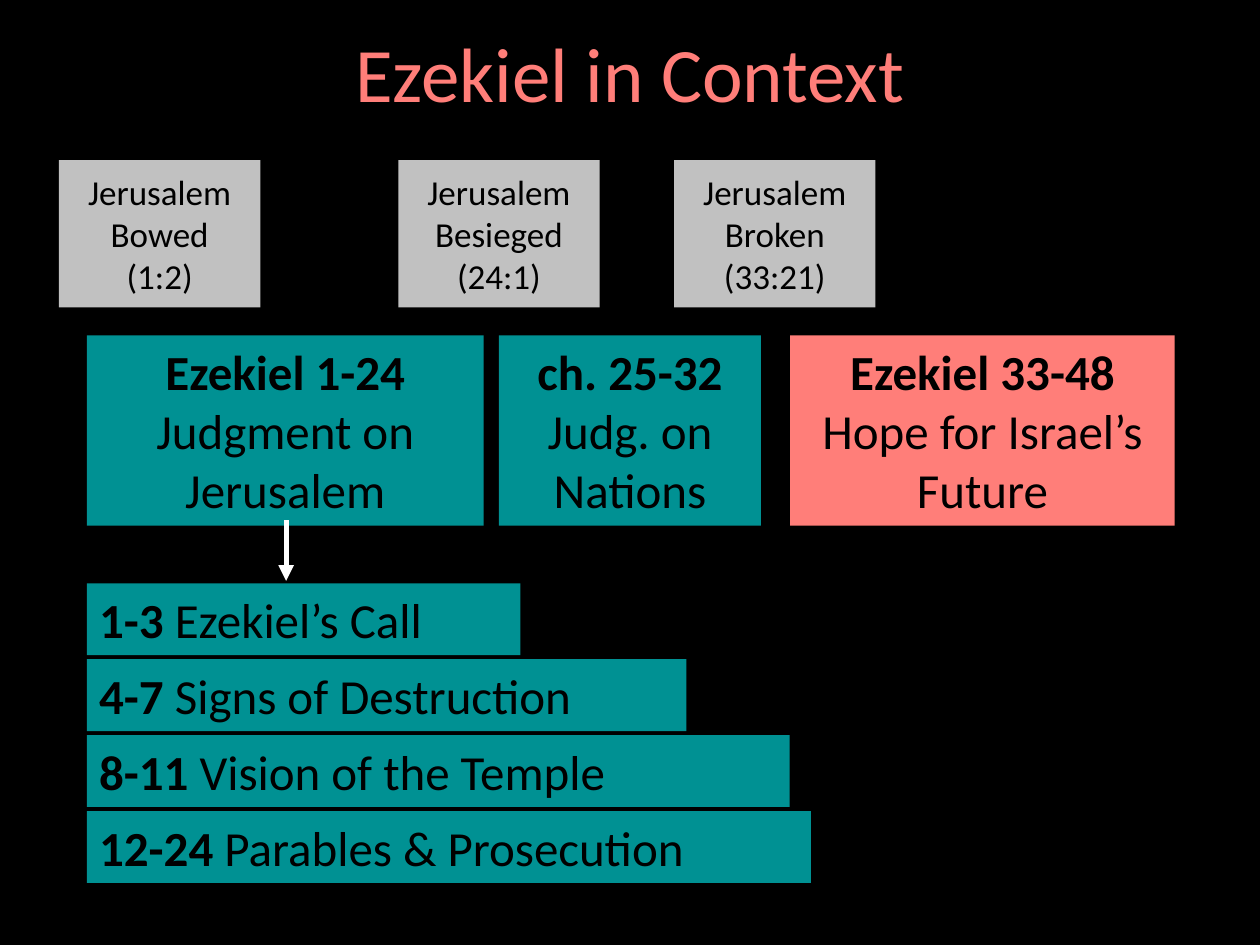
from dataclasses import dataclass

from lxml.etree import SubElement
from pptx import Presentation
from pptx.dml.color import RGBColor
from pptx.enum.shapes import MSO_CONNECTOR, MSO_SHAPE
from pptx.enum.text import MSO_ANCHOR as Anchor, MSO_AUTO_SIZE as AutoSize, PP_ALIGN as Align
from pptx.oxml.ns import qn
from pptx.util import Cm, Pt

FONT = "Calibri"
BLACK, WHITE, GREY, TEAL, CORAL = "000000", "FFFFFF", "C1C1C1", "009193", "FF7E79"
MARGIN = 1.75


@dataclass
class Event:
    left: float
    name: str
    verse: str


@dataclass
class Division:
    left: float
    width: float
    chapters: str
    theme: str
    color: str = TEAL


@dataclass
class Section:
    width: float
    chapters: str
    theme: str


EVENTS = [
    Event(1.19, "Jerusalem Bowed", "(1:2)"),
    Event(8.03, "Jerusalem Besieged", "(24:1)"),
    Event(13.59, "Jerusalem Broken", "(33:21)"),
]
DIVISIONS = [
    Division(MARGIN, 8, "Ezekiel 1-24", "Judgment on Jerusalem"),
    Division(10.06, 5.28, "ch. 25-32", "Judg. on Nations"),
    Division(15.93, 7.75, "Ezekiel 33-48", "Hope for Israel’s Future", CORAL),
]
SECTIONS = [
    Section(8.74, "1-3 ", "Ezekiel’s Call"),
    Section(12.09, "4-7 ", "Signs of Destruction"),
    Section(14.17, "8-11 ", "Vision of the Temple"),
    Section(14.6, "12-24 ", "Parables & Prosecution"),
]


def rgb(color: str) -> RGBColor:
    return RGBColor.from_string(color)


def style(run, size: float, color: str = BLACK, bold: bool = False) -> None:
    run.font.name = FONT
    run.font.size = Pt(size)
    run.font.bold = bold
    run.font.color.rgb = rgb(color)


def add_box(slide, left: float, top: float, width: float, height: float, color: str):
    box = slide.shapes.add_shape(
        MSO_SHAPE.RECTANGLE, Cm(left), Cm(top), Cm(width), Cm(height)
    )
    box.shadow.inherit = False
    box.fill.solid()
    box.fill.fore_color.rgb = rgb(color)
    box.line.fill.background()
    box.text_frame.word_wrap = True
    return box.text_frame


def write_lines(frame, lines: list[str], size: float, bold_first: bool = False) -> None:
    frame.text = "\n".join(lines)
    for index, paragraph in enumerate(frame.paragraphs):
        paragraph.alignment = Align.CENTER
        style(paragraph.runs[0], size, bold=bold_first and index == 0)


def add_title(slide, text: str) -> None:
    frame = slide.shapes.add_textbox(Cm(MARGIN), Cm(0.41), Cm(21.9), Cm(2.29)).text_frame
    frame.word_wrap = True
    frame.vertical_anchor = Anchor.MIDDLE
    frame.text = text
    heading = frame.paragraphs[0]
    heading.alignment = Align.CENTER
    heading.line_spacing = 0.9
    style(heading.runs[0], 44, CORAL)


def add_event(slide, event: Event) -> None:
    frame = add_box(slide, event.left, 3.23, 4.06, 2.97, GREY)
    frame.vertical_anchor = Anchor.MIDDLE
    write_lines(frame, [event.name, event.verse], 20)


def add_division(slide, division: Division) -> None:
    frame = add_box(slide, division.left, 6.76, division.width, 3.84, division.color)
    frame.vertical_anchor = Anchor.TOP
    frame.auto_size = AutoSize.SHAPE_TO_FIT_TEXT
    write_lines(frame, [division.chapters, division.theme], 28, bold_first=True)


def add_section(slide, row: int, section: Section) -> None:
    frame = add_box(slide, MARGIN, 11.76 + row * 1.53, section.width, 1.45, TEAL)
    frame.vertical_anchor = Anchor.TOP
    frame.auto_size = AutoSize.SHAPE_TO_FIT_TEXT
    entry = frame.paragraphs[0]
    entry.alignment = Align.LEFT
    for text, bold in ((section.chapters, True), (section.theme, False)):
        run = entry.add_run()
        run.text = text
        style(run, 28, bold=bold)


def add_arrow(slide, x: float, top: float, bottom: float) -> None:
    arrow = slide.shapes.add_connector(
        MSO_CONNECTOR.STRAIGHT, Cm(x), Cm(top), Cm(x), Cm(bottom)
    )
    arrow.line.color.rgb = rgb(WHITE)
    arrow.line.width = Pt(3)
    SubElement(arrow.line._get_or_add_ln(), qn("a:tailEnd"), type="triangle")
    SubElement(arrow._element.spPr, qn("a:effectLst"))


def main() -> None:
    deck = Presentation()
    deck.slide_width, deck.slide_height = Cm(25.4), Cm(19.05)
    slide = deck.slides.add_slide(deck.slide_layouts[6])
    slide.background.fill.solid()
    slide.background.fill.fore_color.rgb = rgb(BLACK)

    add_title(slide, "Ezekiel in Context")
    for division in DIVISIONS:
        add_division(slide, division)
    for event in EVENTS:
        add_event(slide, event)
    for row, section in enumerate(SECTIONS):
        add_section(slide, row, section)
    add_arrow(slide, 5.77, 10.49, 11.71)
    deck.save("out.pptx")


if __name__ == "__main__":
    main()
